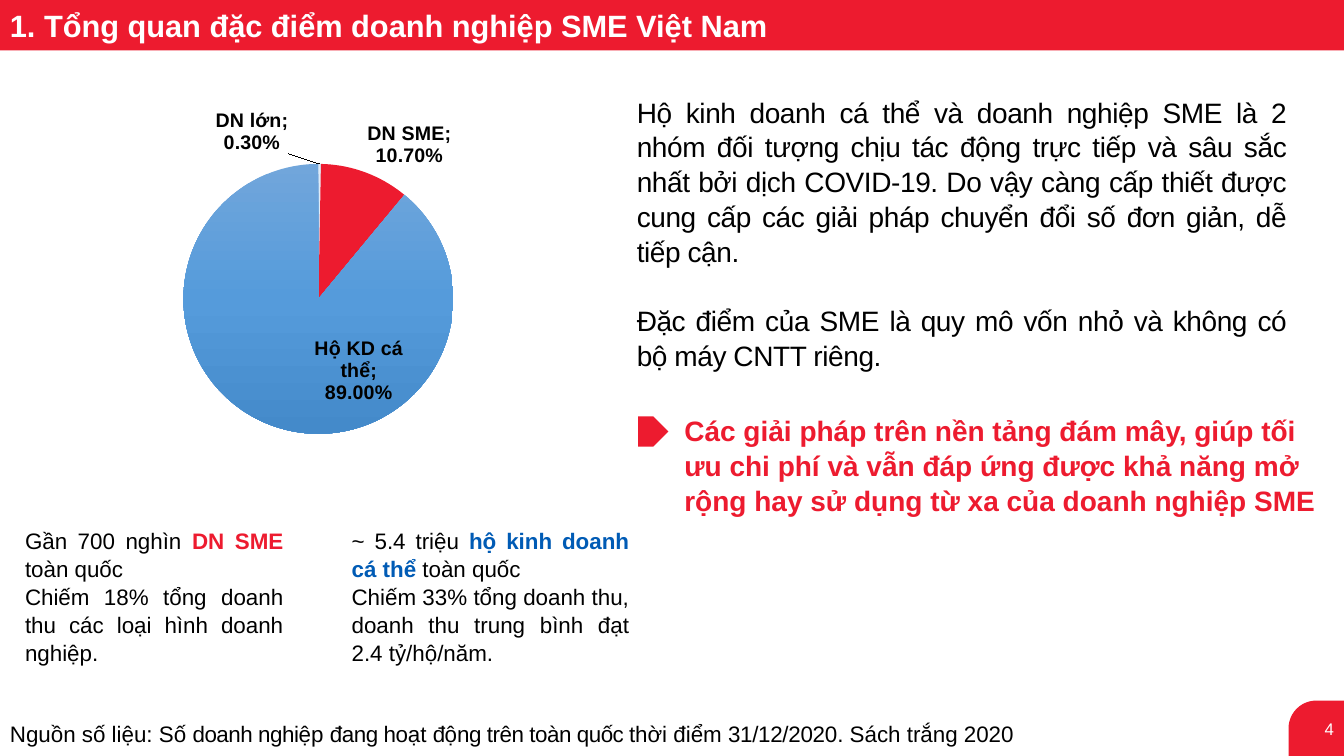
import copy

import pptx
import pptx.chart.data
import pptx.dml.color
import pptx.enum.chart
import pptx.enum.shapes
import pptx.enum.text
import pptx.oxml
import pptx.oxml.ns
import pptx.util

Pt = pptx.util.Pt
RGB = pptx.dml.color.RGBColor
Align = pptx.enum.text.PP_ALIGN
Anchor = pptx.enum.text.MSO_ANCHOR
Shape = pptx.enum.shapes.MSO_SHAPE
LabelPos = pptx.enum.chart.XL_LABEL_POSITION
qn = pptx.oxml.ns.qn
C_NS = pptx.oxml.ns.nsdecls("c")

RED = RGB(0xED, 0x1B, 0x2F)
WHITE = RGB(0xFF, 0xFF, 0xFF)
BLACK = RGB(0, 0, 0)
BLUE = RGB(0x00, 0x5B, 0xB5)
PALE_BLUE = RGB(0xDE, 0xEB, 0xF7)
PIE_BLUES = [(0, RGB(0x71, 0xA6, 0xDB)), (0.5, RGB(0x55, 0x9B, 0xDB)),
             (1, RGB(0x44, 0x8A, 0xCA))]


class SlideBuilder:
    font = "Arial"

    def __init__(self, prs):
        self.slide = prs.slides.add_slide(prs.slide_layouts[6])

    def shape(self, kind, x, y, w, h, color):
        sp = self.slide.shapes.add_shape(kind, Pt(x), Pt(y), Pt(w), Pt(h))
        sp.shadow.inherit = False
        sp.fill.solid()
        sp.fill.fore_color.rgb = color
        sp.line.fill.background()
        return sp

    def paragraph(self, p, runs, size, align=Align.LEFT):
        """Each run is (text, colour, bold, letter spacing in points)."""
        p.alignment = align
        for text, color, bold, spacing in runs:
            r = p.add_run()
            r.text = text
            r.font.name = self.font
            r.font.size = Pt(size)
            r.font.bold = bold
            r.font.color.rgb = color
            if spacing:
                r._r.get_or_add_rPr().set("spc", str(round(spacing * 100)))

    def text(self, x, y, w, h, paragraphs, size, align=Align.LEFT,
             wrap=True, anchor=Anchor.TOP, gap=0, line=1.0, indent=0):
        tf = self.slide.shapes.add_textbox(Pt(x), Pt(y), Pt(w), Pt(h)).text_frame
        tf.word_wrap = wrap
        tf.vertical_anchor = anchor
        for i, runs in enumerate(paragraphs):
            p = tf.add_paragraph() if i else tf.paragraphs[0]
            p.line_spacing = line
            if i and gap:
                p.space_before = Pt(gap)
            if indent:
                p._p.get_or_add_pPr().set("marL", str(Pt(indent)))
            self.paragraph(p, runs, size, align)

    def pie(self, x, y, w, h, values, plot_area, labels):
        """labels holds (position, x shift, y shift) for each slice."""
        data = pptx.chart.data.CategoryChartData(number_format="0.00%")
        data.categories = list(values)
        data.add_series("Series 1", list(values.values()))
        chart = self.slide.shapes.add_chart(
            pptx.enum.chart.XL_CHART_TYPE.PIE, Pt(x), Pt(y), Pt(w), Pt(h), data).chart
        chart.has_legend = chart.has_title = False
        chart.font.name, chart.font.size = self.font, Pt(10)
        chart.font.color.rgb = BLACK
        plot = chart.plots[0]
        plot.vary_by_categories = False
        area = chart._chartSpace.find(".//" + qn("c:plotArea"))
        for old in area.findall(qn("c:layout")):
            area.remove(old)
        parts = "".join(f'<c:{k} val="{v}"/>' for k, v in zip("xywh", plot_area))
        area.insert(0, pptx.oxml.parse_xml(
            f'<c:layout {C_NS}><c:manualLayout><c:layoutTarget val="inner"/>'
            f'<c:xMode val="edge"/><c:yMode val="edge"/>{parts}'
            '</c:manualLayout></c:layout>'))
        series = plot.series[0]
        self.slices(series)
        self.pie_labels(series, labels)

    def slices(self, series):
        for i, color in enumerate((PALE_BLUE, RED)):
            fill = series.points[i].format.fill
            fill.solid()
            fill.fore_color.rgb = color
        fill = series.points[2].format.fill
        fill.gradient()
        fill.gradient_angle = 270
        stops = next(series._element.iter(qn("a:gsLst")))
        stops.append(copy.deepcopy(stops[-1]))
        for stop, (position, color) in zip(fill.gradient_stops, PIE_BLUES):
            stop.position = position
            stop.color.rgb = color

    def pie_labels(self, series, labels):
        dl = series.data_labels
        dl.show_value = dl.show_category_name = True
        dl.number_format, dl.number_format_is_linked = "0.00%", False
        dl.font.name, dl.font.size, dl.font.bold = self.font, Pt(14), True
        dl.font.color.rgb = BLACK
        group = dl._element
        separator = pptx.oxml.parse_xml(f"<c:separator {C_NS}>; </c:separator>")
        group.find(qn("c:showBubbleSize")).addnext(separator)
        shared = [e for e in group if e.tag != qn("c:showLeaderLines")]
        for i, (position, dx, dy) in enumerate(labels):
            label = pptx.oxml.parse_xml(
                f'<c:dLbl {C_NS}><c:idx val="{i}"/><c:layout><c:manualLayout>'
                f'<c:x val="{dx}"/><c:y val="{dy}"/></c:manualLayout></c:layout></c:dLbl>')
            for e in shared:
                label.append(copy.deepcopy(e))
            group.insert(i, label)
            series.points[i].data_label.position = position


def plain(text, spacing=0):
    return (text, BLACK, False, spacing)


def main():
    prs = pptx.Presentation()
    prs.slide_width, prs.slide_height = Pt(960), Pt(540)
    s = SlideBuilder(prs)

    # Page number corner and title bar
    corner = s.shape(Shape.ROUND_1_RECTANGLE, 920.4, 500.4, 39.6, 39.6, RED)
    corner.adjustments[0] = 0.5
    corner._element.spPr.find(qn("a:xfrm")).set("flipH", "1")
    corner.text_frame.vertical_anchor = Anchor.MIDDLE
    s.paragraph(corner.text_frame.paragraphs[0], [("4", WHITE, False, 0)], 12, Align.RIGHT)
    s.shape(Shape.RECTANGLE, 0, 0, 960, 36, RED)
    s.text(0, 1, 563, 34,
           [[("1. Tổng quan đặc điểm doanh nghiệp SME Việt Nam", WHITE, True, 0)]],
           22, wrap=False, anchor=Anchor.MIDDLE)

    # Source line
    source = [("Nguồn số liệu: ", 0), ("S", -0.3), ("ố ", 0), ("doanh nghiệ", -0.3),
              ("p ", 0), ("đang ho", -0.3), ("ạ", -0.4), ("t ", 0), ("độ", -0.4),
              ("ng trên toàn quốc th", -0.3), ("ờ", -0.5), ("i ", 0), ("đ", -0.3),
              ("i", -0.1), ("ể", -0.3), ("m ", 0), ("31/12/2020", -0.2),
              (". Sách trắng 2020", 0)]
    s.text(0, 511.2, 757, 26.6, [[plain(*part) for part in source]], 16)

    # Market size notes under the chart
    notes = [
        (10.8, 198.7, "Gần 700 nghìn ", "DN SME ", RED,
         "Chiếm 18% tổng doanh thu các loại hình doanh nghiệp."),
        (244.1, 212.4, "~ 5.4 triệu ", "hộ kinh doanh cá thể ", BLUE,
         "Chiếm 33% tổng doanh thu, doanh thu trung bình đạt 2.4 tỷ/hộ/năm."),
    ]
    for x, w, count, group, color, share in notes:
        s.text(x, 372.2, w, 104.4,
               [[plain(count), (group, color, True, 0), plain("toàn quốc")],
                [plain(share)]], 16, Align.JUSTIFY, line=1.04)

    # Commentary and conclusion
    s.text(447.8, 63.4, 478.1, 200.9, [
        [plain("Hộ kinh doanh cá thể và doanh nghiệp SME là 2 nhóm đối tượng chịu tác động "
               "trực tiếp và sâu sắc nhất bởi dịch COVID-19. Do vậy càng cấp thiết được cung "
               "cấp các giải pháp chuyển đổi số đơn giản, dễ tiếp cận.", -0.3)],
        [plain("Đặc điểm của SME là quy mô vốn nhỏ và không có bộ máy CNTT riêng.", -0.3)],
    ], 20, Align.JUSTIFY, gap=24, line=1.04)
    s.text(477.4, 290.9, 481, 79.9, [
        [("Các giải pháp trên nền tảng đám mây, giúp tối ưu chi phí và vẫn đáp ứng được "
          "khả năng mở rộng hay sử dụng từ xa của doanh nghiệp SME", RED, True, 0)],
    ], 20, line=1.04, indent=4.3)
    s.shape(Shape.PENTAGON, 455.8, 297.4, 21.6, 21.6, RED)

    # Business mix pie
    s.pie(66.2, 59, 322.6, 306,
          {"DN lớn": 0.003, "DN SME": 0.107, "Hộ KD cá thể": 0.89},
          (0.2, 0.19, 0.6, 0.63),
          [(LabelPos.OUTSIDE_END, -0.15, -0.01), (LabelPos.OUTSIDE_END, 0, 0),
           (LabelPos.CENTER, 0.14, 0.02)])

    prs.save("out.pptx")


if __name__ == "__main__":
    main()
